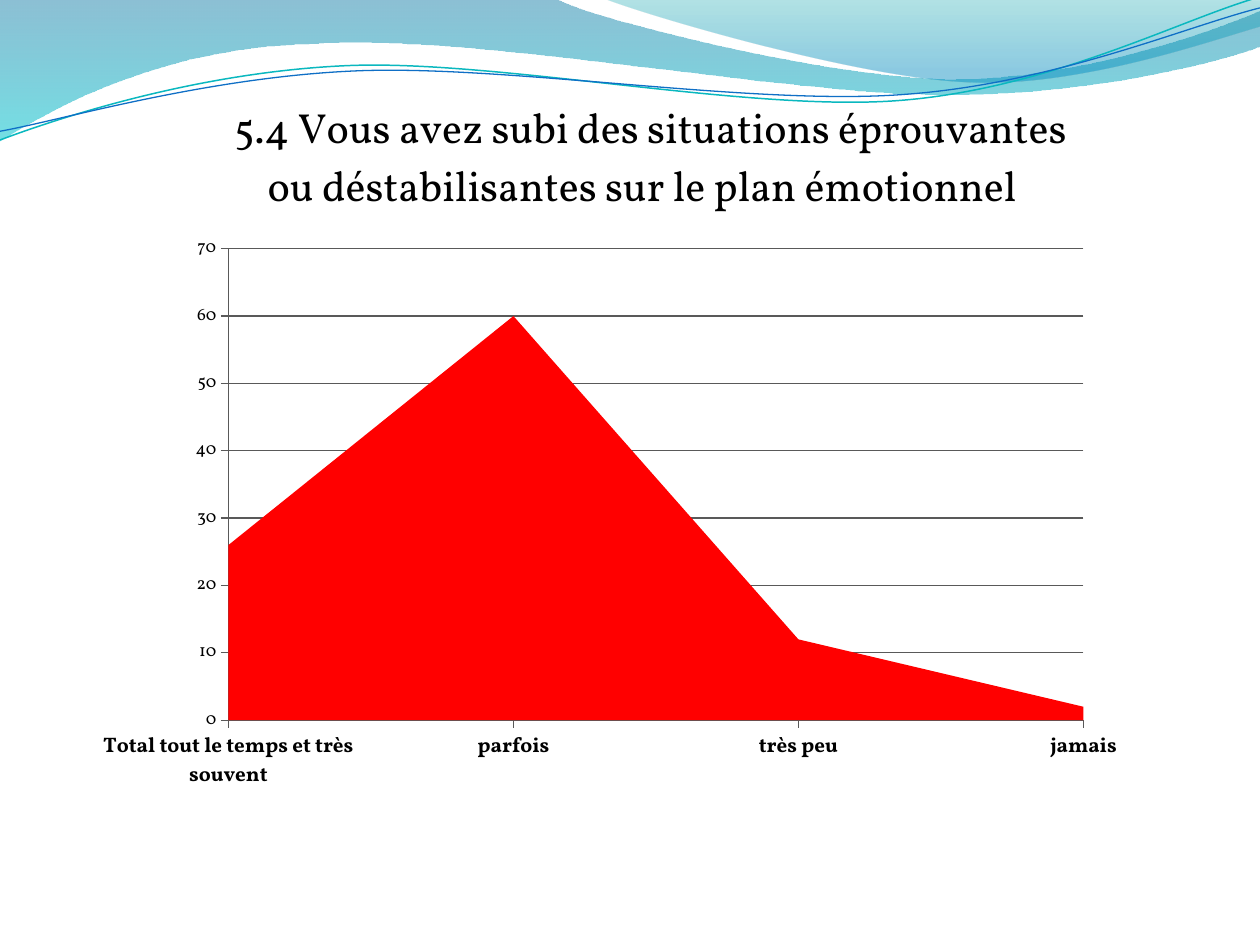
"""Build a survey slide: a stacked area chart under a wave banner."""
import pptx
import pptx.chart.data
import pptx.dml.color
import pptx.enum.chart
import pptx.oxml
import pptx.oxml.ns
import pptx.util

Pt = pptx.util.Pt
qn = pptx.oxml.ns.qn
XL = pptx.enum.chart

FONT = "Vollkorn"
COLORS = {"text": "000000", "grid": "595959", "area": "FF0000",
          "teal": "0AB8BF", "blue": "0F6FC6"}
TITLE = [" 5.4 Vous avez subi des situations éprouvantes",
         "ou déstabilisantes sur le plan émotionnel "]
DATA = [("Total tout le temps et très souvent", 26), ("parfois", 60),
        ("très peu", 12), ("jamais", 2)]
CHART_BOX = (48, 54.4, 607, 419.8)
TITLE_POS = {"x": 0.13, "y": 0.004}
PLOT_POS = {"x": 0.136, "y": 0.209, "w": 0.805, "h": 0.642}

BANDS = [
    ([(0, 0), (317, -1), (343, 12, 478, 45, 546, 45), (614, 45, 690, 19, 720, 6),
      (721, 26), (708, 32, 626, 55, 537, 54), (448, 54, 275, 20, 185, 24.5),
      (93, 26, 33, 60, -1, 81)],
     [(0, "0074A1", 45), (1, "00C6CF", 55)]),
    ([(345, -1), (367, 8, 491, 45, 554, 47), (616, 50, 692, 23, 720, 15), (720, 0)],
     [(0, "00A1A9", 30), (0.8, "008BBF", 45)]),
]
WAVES = [
    ([(0, 80), (34.5, 67, 114, 41, 199, 37.5), (284, 34, 427, 64, 513, 57.5),
      (600, 51, 675, 11, 719, -1.5)], "teal", 0.85),
    ([(0, 75), (34, 69, 118, 44, 204, 40.5), (290, 37, 430, 60.5, 516, 54),
      (602, 48, 678, 15, 720, 4.5)], "blue", 0.75),
]


def rgb(value):
    return pptx.dml.color.RGBColor.from_string(COLORS.get(value, value))


def add_outline(slide, moves, closed):
    points = [(m[i] * 100, m[i + 1] * 100) for m in moves for i in range(0, len(m), 2)]
    fb = slide.shapes.build_freeform(*points[0], scale=Pt(1) / 100)
    fb.add_line_segments(points[1:], close=closed)
    sp = fb.convert_to_shape()
    sp.shadow.inherit = False
    lines = iter(list(sp._element.iter(qn("a:lnTo"))))
    for move in moves[1:]:
        first = next(lines)
        if len(move) == 6:
            curve = pptx.oxml.parse_xml(
                f'<a:cubicBezTo {pptx.oxml.ns.nsdecls("a")}/>')
            first.addprevious(curve)
            for line in (first, next(lines), next(lines)):
                curve.append(line[0])
                line.getparent().remove(line)
    return sp


def add_band(slide, moves, stops):
    sp = add_outline(slide, moves, True)
    sp.line.fill.background()
    sp.fill.gradient()
    sp.fill.gradient_angle = 270
    for stop, (position, color, _) in zip(sp.fill.gradient_stops, stops):
        stop.position = position
        stop.color.rgb = rgb(color)
    for clr, (_, _, opacity) in zip(sp._element.spPr.iter(qn("a:srgbClr")), stops):
        clr.append(pptx.oxml.parse_xml(
            f'<a:alpha {pptx.oxml.ns.nsdecls("a")} val="{opacity * 1000}"/>'))


def add_wave(slide, moves, color, width):
    sp = add_outline(slide, moves, False)
    sp.fill.background()
    sp.line.color.rgb = rgb(color)
    sp.line.width = Pt(width)


def set_layout(parent, position, index, inner=False):
    for old in parent.findall(qn("c:layout")):
        parent.remove(old)
    target = '<c:layoutTarget val="inner"/>' if inner else ""
    modes = "".join(f'<c:{k}Mode val="edge"/>' for k in "xy")
    values = "".join(f'<c:{k} val="{v}"/>' for k, v in position.items())
    parent.insert(index, pptx.oxml.parse_xml(
        f'<c:layout {pptx.oxml.ns.nsdecls("c")}><c:manualLayout>'
        f'{target}{modes}{values}</c:manualLayout></c:layout>'))


def style_font(font, size, bold=False):
    font.name = FONT
    font.size = Pt(size)
    font.bold = bold
    font.color.rgb = rgb("text")


def style_line(line):
    line.color.rgb = rgb("grid")
    line.width = Pt(0.75)


def add_title(chart):
    chart.has_title = True
    tf = chart.chart_title.text_frame
    tf.text = "\n".join(TITLE)
    for p in tf.paragraphs:
        style_font(p.font, 24)
    title = chart.chart_title._element
    set_layout(title, TITLE_POS, 1)
    for overlay in title.iter(qn("c:overlay")):
        overlay.set("val", "1")


def add_area_chart(slide):
    data = pptx.chart.data.CategoryChartData()
    data.categories = [name for name, _ in DATA]
    data.add_series("Series 1", [value for _, value in DATA])
    chart = slide.shapes.add_chart(
        XL.XL_CHART_TYPE.AREA_STACKED, *map(Pt, CHART_BOX), data).chart
    style_font(chart.font, 10)
    chart.has_legend = False
    add_title(chart)
    plot_area = chart._chartSpace.chart.plotArea
    set_layout(plot_area, PLOT_POS, 0, True)

    plot = chart.plots[0]
    plot.vary_by_categories = False
    fill = plot.series[0].format.fill
    fill.solid()
    fill.fore_color.rgb = rgb("area")

    for axis, size, bold in ((chart.category_axis, 12, True), (chart.value_axis, 10, False)):
        axis.major_tick_mark = XL.XL_TICK_MARK.OUTSIDE
        axis.minor_tick_mark = XL.XL_TICK_MARK.NONE
        style_font(axis.tick_labels.font, size, bold)
        style_line(axis.format.line)
    axis.minimum_scale, axis.maximum_scale, axis.major_unit = 0, 70, 10
    axis.has_major_gridlines = True
    style_line(axis.major_gridlines.format.line)
    for cross in plot_area.iter(qn("c:crossBetween")):
        cross.set("val", "midCat")


def main():
    prs = pptx.Presentation()
    prs.slide_width, prs.slide_height = Pt(720), Pt(540)
    slide = prs.slides.add_slide(prs.slide_layouts[6])
    for band in BANDS:
        add_band(slide, *band)
    for wave in WAVES:
        add_wave(slide, *wave)
    add_area_chart(slide)
    prs.save("out.pptx")


if __name__ == "__main__":
    main()
